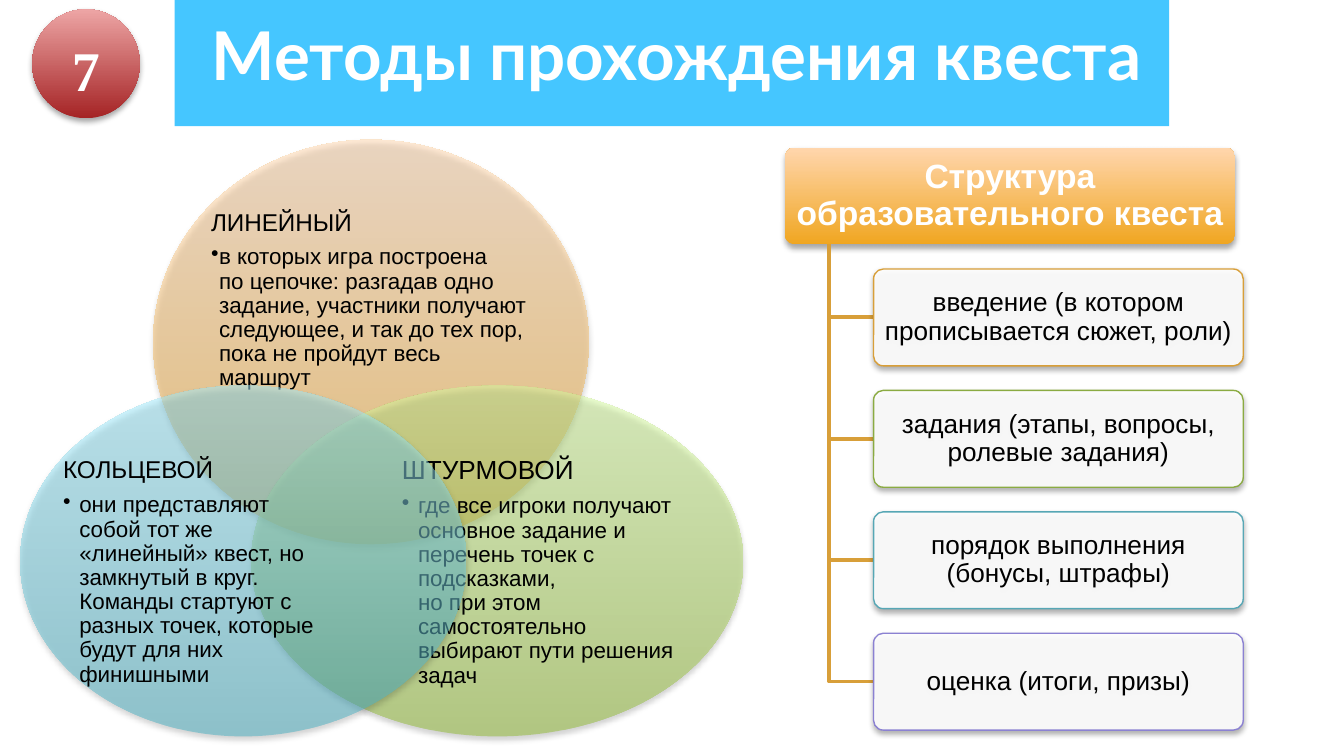
from lxml.etree import SubElement
from pptx import Presentation
from pptx.dml.color import RGBColor
from pptx.enum.shapes import MSO_SHAPE as Preset
from pptx.enum.text import MSO_ANCHOR as Anchor, PP_ALIGN as Align
from pptx.oxml.ns import qn
from pptx.util import Inches, Pt

SLIDE_WIDTH, SLIDE_HEIGHT = Inches(10), Inches(5.625)
COLORS = {
    "white": "FFFFFF", "black": "000000", "banner": "00B2FF",
    "red": "A52425", "pink": "EDA5A5",
    "orange": "F0A621", "peach": "FFD6AD",
    "green": "91BB32", "lime": "D6FBA0",
    "teal": "49B1C3", "sky": "A2EDFF",
    "gold line": "D89F39", "green line": "8BAB42",
    "teal line": "57A7B5", "violet line": "8B81D2",
}

# Boxes are left, top, width, height in percent of the slide
BANNER = (13, 0, 74, 16.71)
TITLE = (9.1, 0, 82.5, 16.71)
BADGE = (2.4, 1.24, 8, 14.4)
METHODS = [
    # circle, bottom and top colour, text box, heading, size, indent, description
    ((11.4, 18.49, 32.4, 53.51), ("orange", "peach"), (15.7, 27.73, 23.8, 24),
     "ЛИНЕЙНЫЙ", 13, 0.06,
     "в которых игра построена \vпо цепочке: разгадав одно задание, участники "
     "получают следующее, и так до тех пор, пока не пройдут весь маршрут"),
    ((18.7, 51.02, 36.6, 46.4), ("green", "lime"), (29.9, 62.93, 21.9, 25.6),
     "ШТУРМОВОЙ", 14, 0.12,
     "где все игроки получают основное задание и перечень точек с подсказками, "
     "\vно при этом самостоятельно выбирают пути решения задач"),
    ((1.5, 51.02, 33.2, 46.4), ("teal", "sky"), (4.7, 62.93, 19.9, 25.6),
     "КОЛЬЦЕВОЙ", 13, 0.12,
     "они представляют собой тот же «линейный» квест, но замкнутый в круг. "
     "Команды стартуют с разных точек, которые будут для них финишными"),
]
STAGES = [
    ("введение (в котором прописывается сюжет, роли)", "gold line"),
    ("задания (этапы, вопросы, ролевые задания)", "green line"),
    ("порядок выполнения (бонусы, штрафы)", "teal line"),
    ("оценка (итоги, призы)", "violet line"),
]
# Structure tree: one row for the header and one for each stage
TREE_TOP, ROW_PITCH, ROW_HEIGHT = 19.53, 16.06, 12.8
HEADER_LEFT, HEADER_WIDTH = 58.4, 33.5
TRUNK, CARD_LEFT, CARD_WIDTH = 61.7, 65, 27.5


def rgb(name):
    return RGBColor.from_string(COLORS[name])


def across(share):
    return round(SLIDE_WIDTH * share / 100)


def down(share):
    return round(SLIDE_HEIGHT * share / 100)


def place(box):
    left, top, width, height = box
    return across(left), down(top), across(width), down(height)


def set_alpha(parent, percent):
    for color in list(parent.iter(qn("a:srgbClr"))):
        SubElement(color, qn("a:alpha"), val=str(percent * 1000))


def add_shadow(shape):
    effects = shape._element.spPr.find(qn("a:effectLst"))
    shadow = SubElement(effects, qn("a:outerShdw"), blurRad=str(Pt(3.1)),
                        dist=str(Pt(1.8)), dir="5400000", rotWithShape="0")
    SubElement(shadow, qn("a:srgbClr"), val=COLORS["black"])
    set_alpha(shadow, 35)


def add_panel(slide, preset, box, fill, alpha=100, line=None, shadow=True):
    """Draw a preset shape; a pair of fill names runs from bottom to top."""
    shape = slide.shapes.add_shape(preset, *place(box))
    if preset == Preset.ROUNDED_RECTANGLE:
        shape.adjustments[0] = 0.1
    if isinstance(fill, tuple):
        shape.fill.gradient()
        shape.fill.gradient_angle = 90
        for stop, name in zip(shape.fill.gradient_stops, fill):
            stop.color.rgb = rgb(name)
    else:
        shape.fill.solid()
        shape.fill.fore_color.rgb = rgb(fill)
    if alpha < 100:
        set_alpha(shape._element.spPr, alpha)
    if line:
        shape.line.color.rgb = rgb(line)
        shape.line.width = Pt(0.75)
    else:
        shape.line.fill.background()
    shape.shadow.inherit = False
    if shadow:
        add_shadow(shape)
    return shape


def set_frame(shape, inset, anchor=Anchor.MIDDLE):
    frame = shape.text_frame
    frame.word_wrap = True
    frame.vertical_anchor = anchor
    frame.margin_left = frame.margin_right = Inches(inset)
    frame.margin_top = frame.margin_bottom = Inches(inset)
    return frame


def write(paragraph, text, size, color="black", font="Arial", bold=False,
          align=Align.CENTER, spacing=0.9):
    paragraph.text = text
    paragraph.alignment = align
    paragraph.line_spacing = spacing
    paragraph.font.name = font
    paragraph.font.size = Pt(size)
    paragraph.font.bold = bold
    paragraph.font.color.rgb = rgb(color)


def add_bullet(paragraph, indent):
    properties = paragraph._p.get_or_add_pPr()
    properties.set("marL", str(Inches(indent)))
    properties.set("indent", str(-Inches(indent)))
    SubElement(properties, qn("a:buChar"), char="•")


def add_title(slide):
    add_panel(slide, Preset.RECTANGLE, BANNER, "banner", alpha=73, shadow=False)
    frame = set_frame(slide.shapes.add_textbox(*place(TITLE)), 0.1, Anchor.TOP)
    write(frame.paragraphs[0], "Методы прохождения квеста", 36, "white", "Lato",
          bold=True, spacing=1.0)


def add_method(slide, circle, fill, text_box, heading, size, indent, description):
    add_panel(slide, Preset.OVAL, circle, fill, alpha=50)
    frame = set_frame(slide.shapes.add_textbox(*place(text_box)), 0)
    write(frame.paragraphs[0], heading, size, align=Align.LEFT)
    frame.paragraphs[0].space_after = Pt(5)
    paragraph = frame.add_paragraph()
    add_bullet(paragraph, indent)
    write(paragraph, description, 12, align=Align.LEFT)


def add_branch(slide, start, end):
    builder = slide.shapes.build_freeform(across(TRUNK), down(start))
    builder.add_line_segments(
        [(across(TRUNK), down(end)), (across(CARD_LEFT), down(end))], close=False)
    branch = builder.convert_to_shape()
    branch.fill.background()
    branch.line.color.rgb = rgb("gold line")
    branch.line.width = Pt(2)
    branch.shadow.inherit = False


def add_structure(slide):
    header = add_panel(slide, Preset.ROUNDED_RECTANGLE,
                       (HEADER_LEFT, TREE_TOP, HEADER_WIDTH, ROW_HEIGHT),
                       ("orange", "peach"))
    write(set_frame(header, 0.04).paragraphs[0],
          "Структура образовательного квеста", 18, "white", bold=True)
    for row, (text, line) in enumerate(STAGES, start=1):
        top = TREE_TOP + row * ROW_PITCH
        add_branch(slide, TREE_TOP + ROW_HEIGHT, top + ROW_HEIGHT / 2)
        card = add_panel(slide, Preset.ROUNDED_RECTANGLE,
                         (CARD_LEFT, top, CARD_WIDTH, ROW_HEIGHT),
                         "white", alpha=90, line=line)
        write(set_frame(card, 0.04).paragraphs[0], text, 14)


def add_badge(slide):
    badge = add_panel(slide, Preset.OVAL, BADGE, ("red", "pink"))
    write(set_frame(badge, 0.04).paragraphs[0], "7", 30, "white",
          "Times New Roman", bold=True, spacing=1.15)


def main():
    presentation = Presentation()
    presentation.slide_width = SLIDE_WIDTH
    presentation.slide_height = SLIDE_HEIGHT
    slide = presentation.slides.add_slide(presentation.slide_layouts[6])
    add_title(slide)
    for method in METHODS:
        add_method(slide, *method)
    add_structure(slide)
    add_badge(slide)
    presentation.save("out.pptx")


if __name__ == "__main__":
    main()
